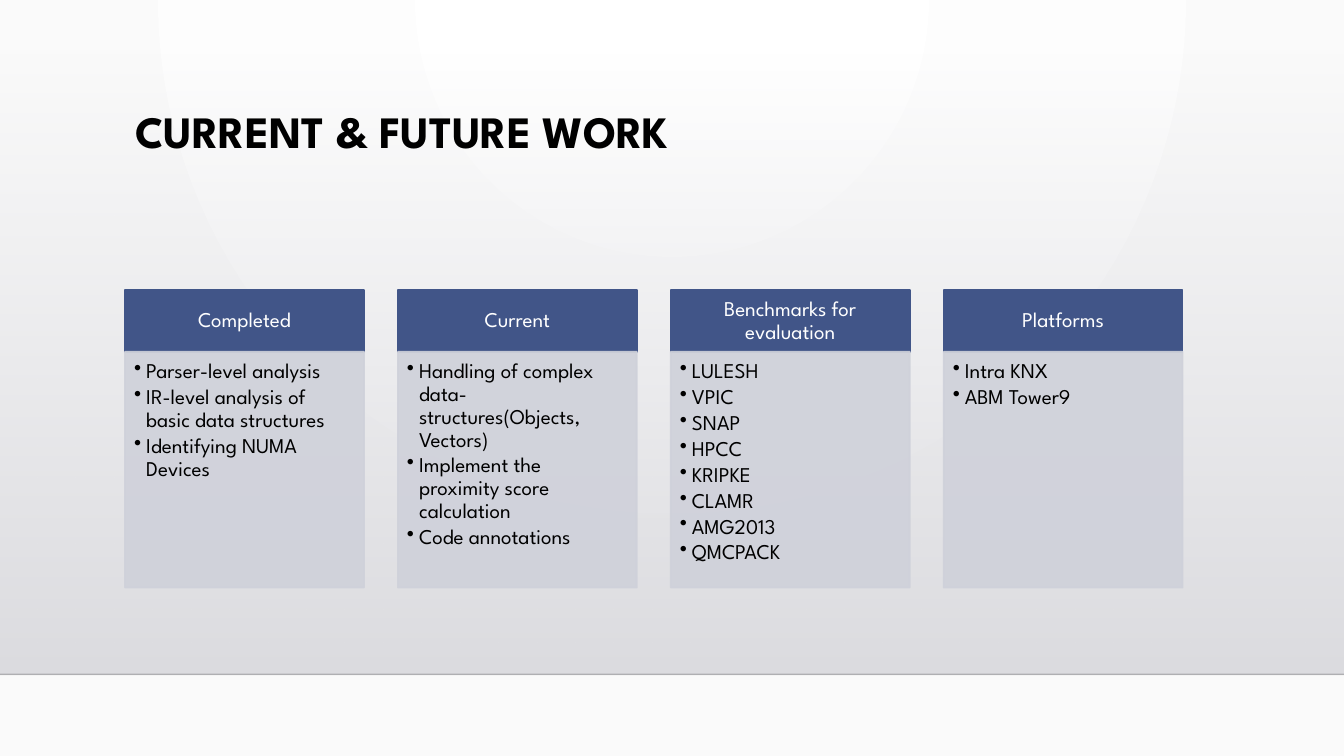
from pptx import Presentation
from pptx.dml.color import RGBColor
from pptx.enum.shapes import MSO_CONNECTOR, MSO_SHAPE
from pptx.enum.text import MSO_ANCHOR, MSO_AUTO_SIZE, PP_ALIGN
from pptx.oxml import parse_xml
from pptx.oxml.ns import nsdecls, qn
from pptx.util import Inches, Pt
from lxml import etree

RECT, STRAIGHT = MSO_SHAPE.RECTANGLE, MSO_CONNECTOR.STRAIGHT
TOP, MIDDLE = MSO_ANCHOR.TOP, MSO_ANCHOR.MIDDLE
LEFT, CENTER = PP_ALIGN.LEFT, PP_ALIGN.CENTER
NO_FIT = MSO_AUTO_SIZE.NONE

FONT = "League Spartan"
COLORS = {
    "black": "000000", "white": "FFFFFF", "paper": "FAFAFA",
    "shade_top": "DCDCE0", "shade_bottom": "DEDEE2",
    "floor": "000001", "header": "415588", "panel": "CFD1DA",
}
CARDS = [
    ("Completed", ["Parser-level analysis",
                   "IR-level analysis of basic data structures",
                   "Identifying NUMA Devices"]),
    ("Current", ["Handling of complex data-structures(Objects, Vectors)",
                 "Implement the proximity score calculation",
                 "Code annotations"]),
    ("Benchmarks for evaluation", ["LULESH", "VPIC", "SNAP", "HPCC", "KRIPKE",
                                   "CLAMR", "AMG2013", "QMCPACK"]),
    ("Platforms", ["Intra KNX", "ABM Tower9"]),
]


def rgb(name):
    return RGBColor.from_string(COLORS[name])


def set_alpha(parent, percent):
    for clr in parent.iter(qn("a:srgbClr")):
        etree.SubElement(clr, qn("a:alpha")).set("val", str(percent * 1000))


def set_gradient(fill, element, stops, direction):
    """Fill with (position, colour, opacity) stops, all in percent."""
    fill.gradient()
    old = next(element.iter(qn("a:gradFill")))
    gs = "".join(
        f'<a:gs pos="{pos * 1000}"><a:srgbClr val="{COLORS[name]}">'
        f'<a:alpha val="{alpha * 1000}"/></a:srgbClr></a:gs>'
        for pos, name, alpha in stops)
    new = parse_xml(f'<a:gradFill {nsdecls("a")} rotWithShape="1">'
                    f'<a:gsLst>{gs}</a:gsLst>{direction}</a:gradFill>')
    old.getparent().replace(old, new)


def add_text(tf, lines, size=15, color="black", bold=False, align=LEFT,
             anchor=TOP, after=0, bullet=False, insets=(0.1, 0.05, 0.1, 0.05)):
    tf.word_wrap, tf.auto_size, tf.vertical_anchor = True, NO_FIT, anchor
    tf.margin_left, tf.margin_top, tf.margin_right, tf.margin_bottom = map(Inches, insets)
    for i, line in enumerate(lines):
        p = tf.add_paragraph() if i else tf.paragraphs[0]
        if bullet:
            pPr = p._p.get_or_add_pPr()
            pPr.set("marL", str(Inches(0.12)))
            pPr.set("indent", str(Inches(-0.12)))
            etree.SubElement(pPr, qn("a:buChar")).set("char", "•")
        p.alignment, p.line_spacing = align, 0.9
        p.space_before, p.space_after = Pt(0), Pt(after)
        r = p.add_run()
        r.text = line
        r.font.name, r.font.size, r.font.bold = FONT, Pt(size), bold
        r.font.color.rgb = rgb(color)


def add_box(s, x, y, w, h, color, alpha=100):
    sp = s.shapes.add_shape(RECT, Inches(x), Inches(y), Inches(w), Inches(h))
    sp.shadow.inherit = False
    sp.fill.solid()
    sp.fill.fore_color.rgb = rgb(color)
    sp.line.color.rgb = rgb(color)
    sp.line.width = Pt(1.25)
    if alpha < 100:
        set_alpha(sp._element.spPr, alpha)
    return sp


def add_backdrop(s, x, y, w, h):
    # Radial glow on the background
    set_gradient(s.background.fill, s._element,
                 [(0, "white", 100), (100, "paper", 100)],
                 '<a:path path="circle"><a:fillToRect l="43000" t="0" '
                 'r="43000" b="100000"/></a:path>')
    # Wall shading that fades in towards the floor
    wall = add_box(s, x, y, w, h, "shade_top")
    wall.line.fill.background()
    set_gradient(wall.fill, wall._element.spPr,
                 [(0, "shade_top", 0), (100, "shade_bottom", 100)],
                 '<a:lin ang="5400000" scaled="0"/>')
    # Floor line
    floor = s.shapes.add_connector(STRAIGHT, Inches(x), Inches(y + h),
                                   Inches(x + w), Inches(y + h))
    floor.line.color.rgb = rgb("floor")
    floor.line.width = Pt(1)
    spPr = floor._element.spPr
    set_alpha(spPr, 20)
    etree.SubElement(spPr, qn("a:effectLst"))


def add_title(s, x, y, w, h, text):
    title = s.shapes.title
    title.left, title.top, title.width, title.height = map(Inches, (x, y, w, h))
    add_text(title.text_frame, [text], size=32, bold=True)
    s.shapes._spTree.append(title._element)  # in front of the backdrop


def add_card(s, x, y, w, h, heading, items, header_h=0.61):
    header = add_box(s, x, y, w, header_h, "header")
    add_text(header.text_frame, [heading], color="white", align=CENTER,
             anchor=MIDDLE, insets=(0.12, 0.07, 0.12, 0.07))
    panel = add_box(s, x, y + header_h, w, h - header_h, "panel", alpha=90)
    add_text(panel.text_frame, items, after=2.25, bullet=True,
             insets=(0.09, 0.09, 0.12, 0.13))


def add_cards(s, x, y, w, h, cards, card_w=2.37):
    pitch = (w - card_w) / (len(cards) - 1)
    for i, (heading, items) in enumerate(cards):
        add_card(s, x + i * pitch, y, card_w, h, heading, items)


def main():
    prs = Presentation()
    prs.slide_width, prs.slide_height = Inches(13.33), Inches(7.5)
    s = prs.slides.add_slide(prs.slide_layouts[5])
    add_backdrop(s, 0, 0.51, 13.33, 6.18)
    add_title(s, 1.24, 1.04, 10.5, 1.15, "CURRENT & FUTURE WORK")
    add_cards(s, 1.24, 2.88, 10.49, 2.95, CARDS)
    prs.save("out.pptx")


if __name__ == "__main__":
    main()
